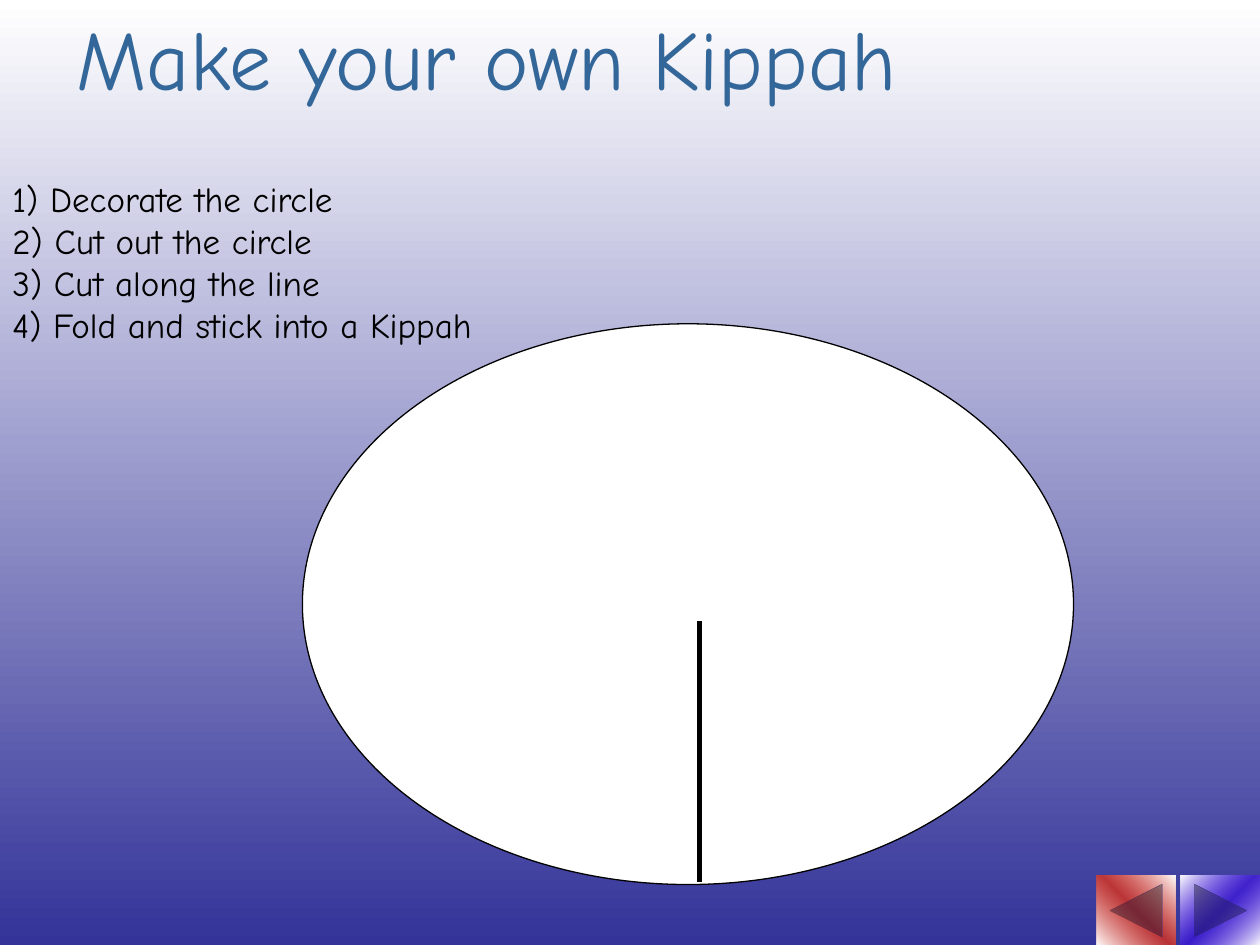
from lxml import etree
from pptx import Presentation, util as u
from pptx.dml.color import RGBColor
from pptx.enum import shapes, text
from pptx.oxml import ns, parse_xml

COLORS = {"white": "FFFFFF", "night": "333399", "heading": "336699",
          "ink": "000000", "red": "FF3101", "blue": "420AF6"}
STEPS = ["Decorate the circle", "Cut out the circle",
         "Cut along the line", "Fold and stick into a Kippah"]


class Worksheet:
    """Holds the style and the current slide, placing parts by shares of its size."""

    font = "Comic Neue"

    def __init__(self, width, height):
        self.deck = Presentation()
        self.deck.slide_width, self.deck.slide_height = u.Inches(width), u.Inches(height)
        self.slide = self.deck.slides.add_slide(self.deck.slide_layouts[6])

    def place(self, *shares):
        sizes = (self.deck.slide_width, self.deck.slide_height) * 2
        return [u.Emu(round(share * size)) for share, size in zip(shares, sizes)]

    def color(self, name):
        return RGBColor.from_string(COLORS[name])

    def gradient(self, fill, owner, stops, angle):
        fill.solid()
        marks = "".join(
            f'<a:gs pos="{at * 1000}"><a:srgbClr val="{COLORS[name]}">'
            f'<a:alpha val="{alpha * 1000}"/></a:srgbClr></a:gs>'
            for at, name, alpha in stops)
        blend = parse_xml(
            f'<a:gradFill {ns.nsdecls("a")} rotWithShape="1"><a:gsLst>{marks}</a:gsLst>'
            f'<a:lin ang="{angle * 60000}" scaled="1"/></a:gradFill>')
        plain = next(owner.iter(ns.qn("a:solidFill")))
        plain.getparent().replace(plain, blend)

    def backdrop(self, top, bottom):
        self.gradient(self.slide.background.fill, self.slide.element,
                      [(0, top, 100), (100, bottom, 100)], 90)

    def words(self, shares, lines, size, color, frame_format, align):
        frame = self.slide.shapes.add_textbox(*self.place(*shares)).text_frame
        for name, value in {"word_wrap": True, **frame_format}.items():
            setattr(frame, name, value)
        frame.text = "\n".join(lines)
        for paragraph in frame.paragraphs:
            paragraph.alignment = align
            font = paragraph.runs[0].font
            for name, value in {"name": self.font, "size": u.Pt(size)}.items():
                setattr(font, name, value)
            font.color.rgb = self.color(color)

    def shape(self, kind, shares):
        part = self.slide.shapes.add_shape(kind, *self.place(*shares))
        part.shadow.inherit = False
        return part

    def ellipse(self, shares, fill, line, weight):
        disc = self.shape(shapes.MSO_SHAPE.OVAL, shares)
        disc.fill.solid()
        disc.fill.fore_color.rgb = self.color(fill)
        disc.line.color.rgb = self.color(line)
        disc.line.width = u.Pt(weight)

    def line(self, shares, color, weight):
        cut = self.slide.shapes.add_connector(
            shapes.MSO_CONNECTOR.STRAIGHT, *self.place(*shares))
        cut.line.color.rgb = self.color(color)
        cut.line.width = u.Pt(weight)
        etree.SubElement(cut.element.spPr, ns.qn("a:effectLst"))

    def button(self, shares, tint, alpha, backward=False):
        arrow = self.shape(shapes.MSO_SHAPE.ACTION_BUTTON_FORWARD_OR_NEXT, shares)
        self.gradient(arrow.fill, arrow.element.spPr,
                      [(0, "white", 100), (50, tint, alpha), (100, "white", 100)], 45)
        arrow.line.fill.background()
        if backward:
            arrow.element.spPr.xfrm.set("flipH", "1")


def main():
    sheet = Worksheet(10, 7.5)
    sheet.backdrop("white", "night")
    sheet.words((0.051, 0, 0.9, 1 / 6), ["Make your own Kippah"], 48, "heading",
                {"vertical_anchor": text.MSO_ANCHOR.TOP}, text.PP_ALIGN.LEFT)
    sheet.words((0, 1.36 / 7.5, 0.411, 1.43 / 7.5),
                [f"{number}) {step}" for number, step in enumerate(STEPS, 1)], 20, "ink",
                {"vertical_anchor": text.MSO_ANCHOR.MIDDLE,
                 "auto_size": text.MSO_AUTO_SIZE.SHAPE_TO_FIT_TEXT}, text.PP_ALIGN.JUSTIFY)
    sheet.ellipse((0.24, 2.57 / 7.5, 0.612, 4.45 / 7.5), "white", "ink", 0.75)
    sheet.line((0.555, 7 / 7.5, 0.555, 4.93 / 7.5), "ink", 3)
    width, height, pitch = 0.063, 0.55 / 7.5, 0.067
    for place, (tint, alpha) in enumerate([("blue", 52), ("red", 65)][::-1]):
        left = 1 - width - (1 - place) * pitch
        sheet.button((left, 1 - height, width, height), tint, alpha, backward=place == 0)
    sheet.deck.save("out.pptx")


if __name__ == "__main__":
    main()
